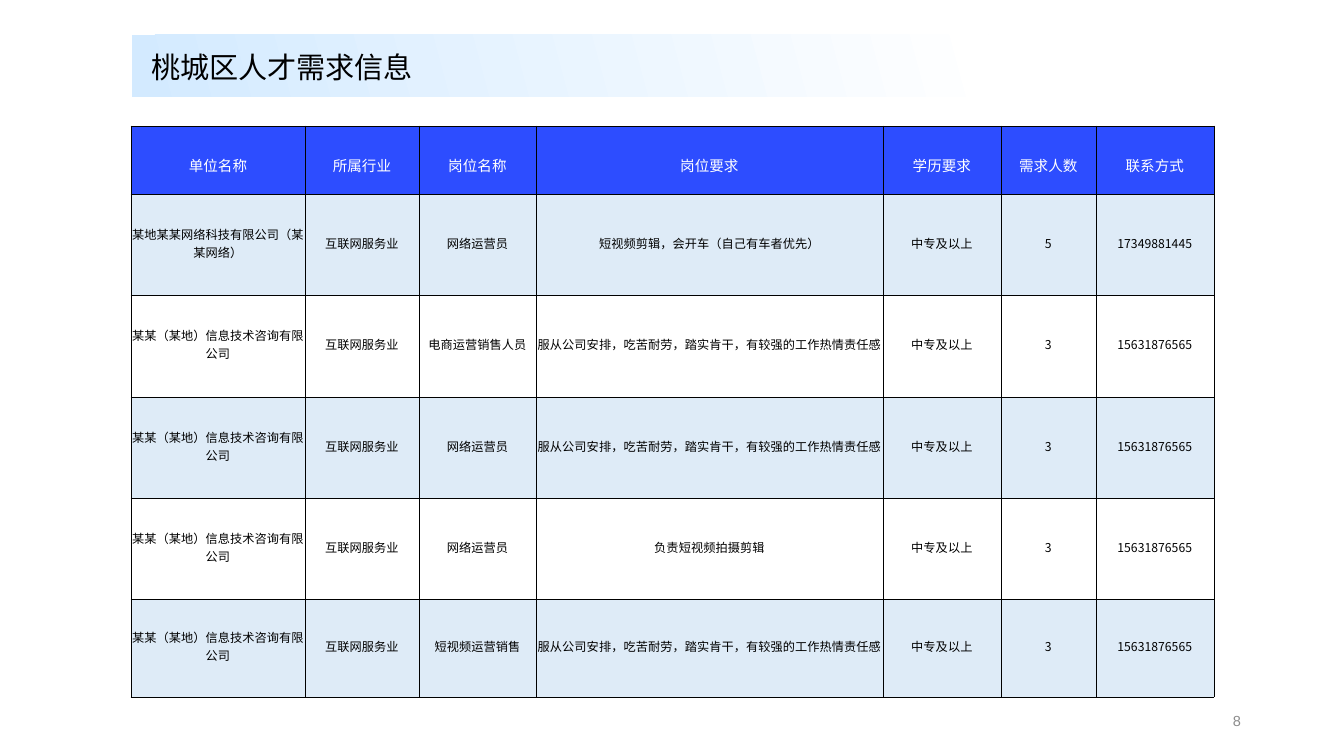
from typing import NamedTuple

from lxml import etree
from pptx import Presentation
from pptx import util as u
from pptx.dml.color import RGBColor
from pptx.enum import shapes, text
from pptx.oxml.ns import qn

PX = 9071.43  # EMU in one px
CJK = "Noto Sans CJK SC"
BLACK = RGBColor(0x00, 0x00, 0x00)
WHITE = RGBColor(0xFF, 0xFF, 0xFF)
GRAY = RGBColor(0x8C, 0x8C, 0x8C)
BLUE = RGBColor(0x2D, 0x4D, 0xFF)
PALE = RGBColor(0xDE, 0xEB, 0xF7)
SKY = RGBColor(0xD3, 0xEA, 0xFF)


class Job(NamedTuple):
    firm: str
    post: str
    need: str
    count: str
    phone: str
    field: str = "互联网服务业"
    degree: str = "中专及以上"

    def row(self) -> list[str]:
        return [self.firm, self.field, self.post, self.need,
                self.degree, self.count, self.phone]


class Look(NamedTuple):
    size: float
    color: RGBColor
    face: str = CJK
    align: text.PP_ALIGN = text.PP_ALIGN.CENTER
    space: float = 1.0


TITLE = Look(20.8, BLACK, align=text.PP_ALIGN.LEFT)
HEAD = Look(10.4, WHITE, space=1.5)
BODY = Look(8.7, BLACK)
PAGE = Look(10.4, GRAY, "Arial", text.PP_ALIGN.RIGHT)

HEADS = ["单位名称", "所属行业", "岗位名称", "岗位要求", "学历要求", "需求人数", "联系方式"]
FIRM = "某某（某地）信息技术咨询有限公司"
DUTY = "服从公司安排，吃苦耐劳，踏实肯干，有较强的工作热情责任感"
PHONE = "15631876565"
JOBS = [
    Job("某地某某网络科技有限公司（某某网络）", "网络运营员",
        "短视频剪辑，会开车（自己有车者优先）", "5", "17349881445"),
    Job(FIRM, "电商运营销售人员", DUTY, "3", PHONE),
    Job(FIRM, "网络运营员", DUTY, "3", PHONE),
    Job(FIRM, "网络运营员", "负责短视频拍摄剪辑", "3", PHONE),
    Job(FIRM, "短视频运营销售", DUTY, "3", PHONE),
]
WIDTHS = [174, 114, 117, 347, 118, 95, 118]
HEIGHTS = [68, 101, 102, 101, 101, 98]


def px(n: int) -> u.Emu:
    return u.Emu(round(n * PX))


def write(frame, words: str, look: Look) -> None:
    frame.text = words
    para = frame.paragraphs[0]
    para.alignment = look.align
    para.line_spacing = look.space
    font = para.runs[0].font
    font.size = u.Pt(look.size)
    font.name = look.face
    font.color.rgb = look.color


def edge(cell) -> None:
    """Draw a thin black line on all four sides of a cell."""
    props = cell._tc.get_or_add_tcPr()
    for i, side in enumerate(("lnL", "lnR", "lnT", "lnB")):
        line = etree.Element(qn(f"a:{side}"), w=str(u.Pt(0.5)))
        fill = etree.SubElement(line, qn("a:solidFill"))
        etree.SubElement(fill, qn("a:srgbClr"), val=str(BLACK))
        props.insert(i, line)


def add_title(slide) -> None:
    title = slide.shapes.title
    title.left, title.top, title.width, title.height = map(px, (141, 44, 282, 45))
    write(title.text_frame, "桃城区人才需求信息", TITLE)
    title.text_frame.word_wrap = False
    title.text_frame.auto_size = text.MSO_AUTO_SIZE.SHAPE_TO_FIT_TEXT
    title.text_frame.vertical_anchor = text.MSO_ANCHOR.TOP

    band = slide.shapes.add_shape(shapes.MSO_SHAPE.RECTANGLE, *map(px, (132, 35, 857, 62)))
    band.shadow.inherit = False
    band.line.fill.background()
    band.fill.gradient()
    band.fill.gradient_angle = 15
    for stop, color in zip(band.fill.gradient_stops, (SKY, WHITE)):
        stop.color.rgb = color
    title.element.addprevious(band.element)


def add_jobs(slide) -> None:
    rows = [HEADS] + [job.row() for job in JOBS]
    box = map(px, (131, 126, sum(WIDTHS), sum(HEIGHTS)))
    table = slide.shapes.add_table(len(rows), len(HEADS), *box).table
    table.first_row = table.horz_banding = False
    for col, wide in zip(table.columns, WIDTHS):
        col.width = px(wide)
    for r, (row, high) in enumerate(zip(rows, HEIGHTS)):
        table.rows[r].height = px(high)
        for c, words in enumerate(row):
            cell = table.cell(r, c)
            write(cell.text_frame, words, BODY if r else HEAD)
            cell.vertical_anchor = text.MSO_ANCHOR.MIDDLE
            cell.margin_left = cell.margin_right = cell.margin_top = px(1 if r else 3)
            cell.margin_bottom = px(4 if r else 3)
            if r and r % 2 == 0:
                cell.fill.background()
            else:
                cell.fill.solid()
                cell.fill.fore_color.rgb = PALE if r else BLUE
            edge(cell)


def add_page(slide) -> None:
    frame = slide.shapes.add_textbox(*map(px, (949, 701, 302, 40))).text_frame
    frame.word_wrap = True
    frame.vertical_anchor = text.MSO_ANCHOR.MIDDLE
    write(frame, "8", PAGE)


def set_asian(slide) -> None:
    """Give Chinese text the same face as Latin text."""
    for latin in list(slide.element.iter(qn("a:latin"))):
        latin.addnext(etree.Element(qn("a:ea"), typeface=latin.get("typeface")))


def main() -> None:
    deck = Presentation()
    deck.slide_width, deck.slide_height = px(1344), px(756)
    slide = deck.slides.add_slide(deck.slide_layouts[5])
    add_title(slide)
    add_jobs(slide)
    add_page(slide)
    set_asian(slide)
    deck.save("out.pptx")


if __name__ == "__main__":
    main()
